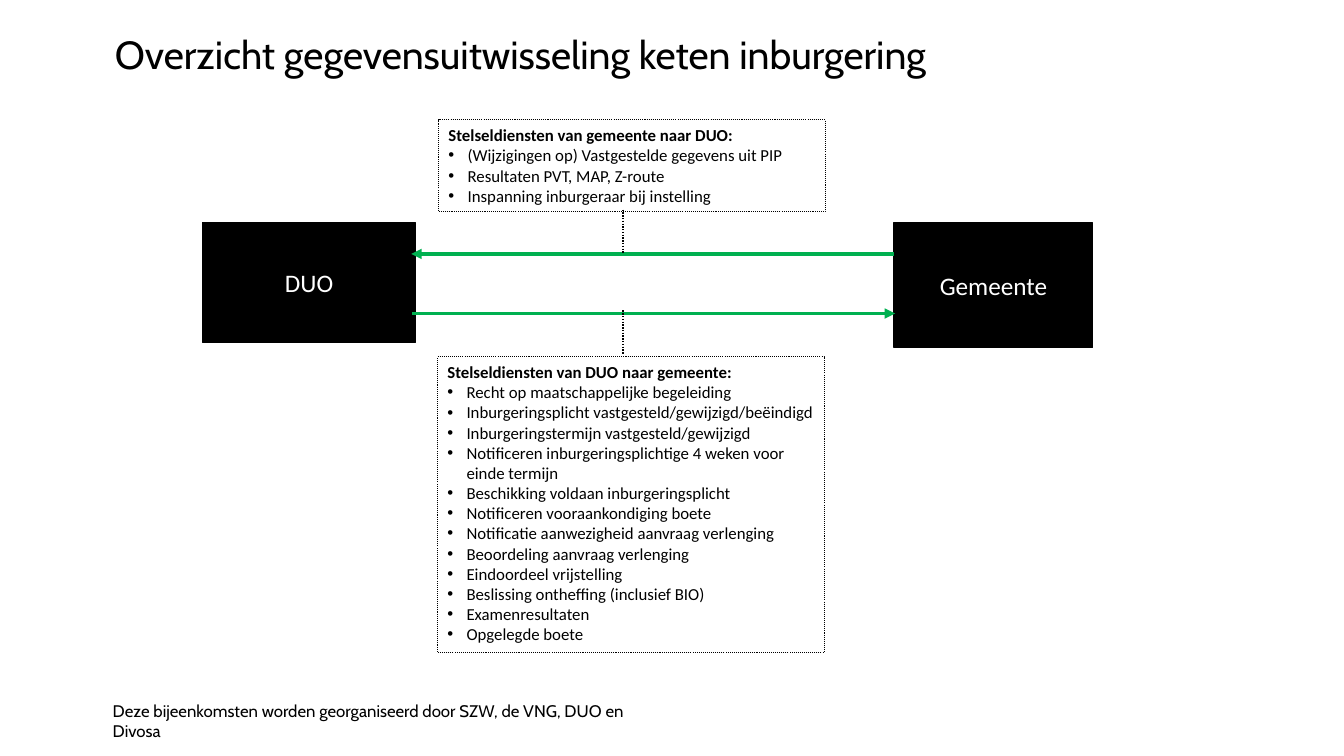
"""Build the slide on data exchange between DUO and the municipality."""
from dataclasses import dataclass

import pptx
import pptx.dml.color
import pptx.enum.dml
import pptx.enum.shapes
import pptx.enum.text
import pptx.oxml.ns
import pptx.util
from lxml import etree

TITLE = ("Overzicht gegevensuitwisseling keten inburgering", (7.8, 2.27, 89.63, 10.53))
FOOTER = ("Deze bijeenkomsten worden georganiseerd door SZW, de VNG, DUO en Divosa", (7.65, 92, 40.95, 4))
PARTIES = [
    ("DUO", (15.08, 29.47, 15.83, 15.87)),
    ("Gemeente", (66.53, 29.47, 14.78, 16.53)),
]
SERVICES = [
    ("Stelseldiensten van gemeente naar DUO:", (32.63, 15.87, 28.8, 12.13), [
        "(Wijzigingen op) Vastgestelde gegevens uit PIP",
        "Resultaten PVT, MAP, Z-route",
        "Inspanning inburgeraar bij instelling",
    ]),
    ("Stelseldiensten van DUO naar gemeente:", (32.55, 47.2, 28.8, 39.07), [
        "Recht op maatschappelijke begeleiding",
        "Inburgeringsplicht vastgesteld/gewijzigd/beëindigd",
        "Inburgeringstermijn vastgesteld/gewijzigd",
        "Notificeren inburgeringsplichtige 4 weken voor einde termijn",
        "Beschikking voldaan inburgeringsplicht",
        "Notificeren vooraankondiging boete",
        "Notificatie aanwezigheid aanvraag verlenging",
        "Beoordeling aanvraag verlenging",
        "Eindoordeel vrijstelling",
        "Beslissing ontheffing (inclusief BIO)",
        "Examenresultaten",
        "Opgelegde boete",
    ]),
]
FLOWS = [((66.53, 33.6), (30.6, 33.6)), ((30.68, 41.47), (66.6, 41.47))]
LEADERS = [((46.35, 27.73), (46.35, 33.6)), ((46.35, 41.07), (46.35, 46.8))]


@dataclass(frozen=True)
class Theme:
    heading_font: str = "Cabin"
    body_font: str = "Calibri"
    dark: str = "000000"
    light: str = "FFFFFF"
    flow: str = "00B050"
    title_size: int = 28
    party_size: int = 18
    small_size: int = 12
    flow_width: float = 2.5
    line_width: float = 1
    note_width: float = 0.75
    bullet_indent: float = 0.19


THEME = Theme()
DOTTED = pptx.enum.dml.MSO_LINE.ROUND_DOT
RECTANGLE = pptx.enum.shapes.MSO_SHAPE.RECTANGLE
MIDDLE = pptx.enum.text.MSO_ANCHOR.MIDDLE
ALIGN = pptx.enum.text.PP_ALIGN

deck = pptx.Presentation()
deck.slide_width = pptx.util.Inches(13.333)
deck.slide_height = pptx.util.Inches(7.5)
page = deck.slides.add_slide(deck.slide_layouts[5])


def place(shares):
    """Turn percentages of the slide's width and height into lengths."""
    sides = (deck.slide_width, deck.slide_height) * 2
    return [round(side * share / 100) for side, share in zip(sides, shares)]


def color(code):
    """Give the colour for a hexadecimal code."""
    return pptx.dml.color.RGBColor.from_string(code)


def write(para, text, font, size, ink=THEME.dark, bold=False):
    """Add one formatted run to a paragraph."""
    span = para.add_run()
    span.text = text
    span.font.name = font
    span.font.size = pptx.util.Pt(size)
    span.font.bold = bold
    span.font.color.rgb = color(ink)


def outline(item, ink, width, dash=None):
    """Set the line of a shape or connector."""
    item.line.color.rgb = color(ink)
    item.line.width = pptx.util.Pt(width)
    if dash:
        item.line.dash_style = dash


def add_box(shares):
    """Add a rectangle without shadow."""
    box = page.shapes.add_shape(RECTANGLE, *place(shares))
    box.shadow.inherit = False
    box.text_frame.word_wrap = True
    return box


def add_line(start, end, ink, width, dash=None, arrow=False):
    """Add a straight line, with an arrowhead at its end if asked."""
    straight = pptx.enum.shapes.MSO_CONNECTOR.STRAIGHT
    line = page.shapes.add_connector(straight, *place(start + end))
    outline(line, ink, width, dash)
    if arrow:
        etree.SubElement(line.line._get_or_add_ln(), pptx.oxml.ns.qn("a:tailEnd"), type="triangle")
    etree.SubElement(line._element.spPr, pptx.oxml.ns.qn("a:effectLst"))


def add_bullet(para):
    """Give a paragraph a hanging round bullet."""
    indent = pptx.util.Inches(THEME.bullet_indent)
    props = para._p.get_or_add_pPr()
    props.set("marL", str(indent))
    props.set("indent", str(-indent))
    etree.SubElement(props, pptx.oxml.ns.qn("a:buFont"), typeface="Arial")
    etree.SubElement(props, pptx.oxml.ns.qn("a:buChar"), char="•")


def add_heading():
    """Fill the title and the line at the foot of the slide."""
    text, shares = TITLE
    title = page.shapes.title
    title.left, title.top, title.width, title.height = place(shares)
    title.text_frame.auto_size = pptx.enum.text.MSO_AUTO_SIZE.NONE
    title.text_frame.vertical_anchor = MIDDLE
    para = title.text_frame.paragraphs[0]
    para.alignment = ALIGN.LEFT
    para.line_spacing = 0.9
    write(para, text, THEME.heading_font, THEME.title_size)

    text, shares = FOOTER
    footer = page.shapes.add_textbox(*place(shares))
    footer.text_frame.word_wrap = True
    write(footer.text_frame.paragraphs[0], text, THEME.heading_font, THEME.small_size)


def add_party(name, shares):
    """Add a filled box for one organisation."""
    box = add_box(shares)
    box.fill.solid()
    box.fill.fore_color.rgb = color(THEME.dark)
    outline(box, THEME.dark, THEME.line_width)
    box.text_frame.vertical_anchor = MIDDLE
    para = box.text_frame.paragraphs[0]
    para.alignment = ALIGN.CENTER
    write(para, name, THEME.body_font, THEME.party_size, THEME.light)


def add_services(heading, shares, services):
    """Add a dotted box with a heading and a bulleted list."""
    box = add_box(shares)
    box.fill.background()
    outline(box, THEME.dark, THEME.note_width, DOTTED)
    frame = box.text_frame
    frame.vertical_anchor = pptx.enum.text.MSO_ANCHOR.TOP
    para = frame.paragraphs[0]
    para.alignment = ALIGN.LEFT
    write(para, heading, THEME.body_font, THEME.small_size, bold=True)
    for service in services:
        para = frame.add_paragraph()
        para.alignment = ALIGN.LEFT
        add_bullet(para)
        write(para, service, THEME.body_font, THEME.small_size)


def main():
    """Draw all parts and save the deck."""
    add_heading()
    for party in PARTIES:
        add_party(*party)
    for flow, service, leader in zip(FLOWS, SERVICES, LEADERS):
        add_line(*flow, THEME.flow, THEME.flow_width, arrow=True)
        add_services(*service)
        add_line(*leader, THEME.dark, THEME.line_width, DOTTED)
    deck.save("out.pptx")


if __name__ == "__main__":
    main()
